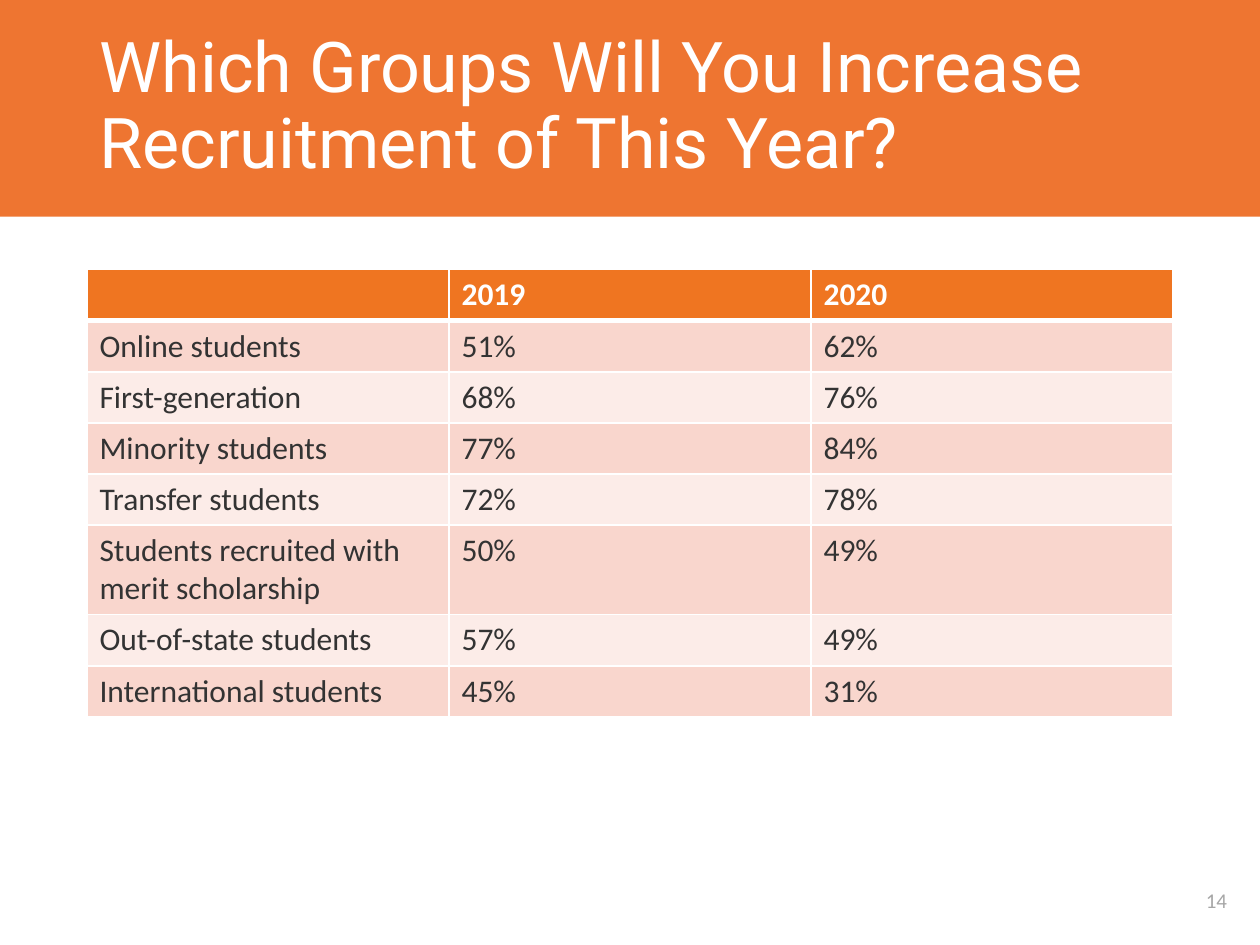
import lxml.etree
import pptx
import pptx.dml.color
import pptx.enum.shapes
import pptx.enum.text
import pptx.oxml.ns
import pptx.util

Inches = pptx.util.Inches
Pt = pptx.util.Pt

COLOURS = {
    "band": "EE7531",
    "header": "EF7521",
    "odd": "F9D6CD",
    "even": "FCECE8",
    "text": "333333",
    "number": "A6A6A6",
    "white": "FFFFFF",
}

ROWS = [
    ("", "2019", "2020"),
    ("Online students", "51%", "62%"),
    ("First-generation", "68%", "76%"),
    ("Minority students", "77%", "84%"),
    ("Transfer students", "72%", "78%"),
    ("Students recruited with merit scholarship", "50%", "49%"),
    ("Out-of-state students", "57%", "49%"),
    ("International students", "45%", "31%"),
]
TALL_ROW = 5


class SlideBuilder:
    """Hold the style and the current slide, and add each kind of element."""

    def __init__(self, deck):
        self.slide = deck.slides.add_slide(deck.slide_layouts[5])
        self.shapes = self.slide.shapes
        self.heading_font = "Roboto"
        self.body_font = "Calibri"

    def colour(self, name):
        return pptx.dml.color.RGBColor.from_string(COLOURS[name])

    def format(self, para, font, size, colour, bold=False):
        para.font.name = font
        para.font.size = Pt(size)
        para.font.bold = bold
        para.font.color.rgb = self.colour(colour)

    def band(self, left, top, width, height):
        band = self.shapes.add_shape(
            pptx.enum.shapes.MSO_SHAPE.RECTANGLE,
            Inches(left), Inches(top), Inches(width), Inches(height))
        band.shadow.inherit = False
        band.fill.solid()
        band.fill.fore_color.rgb = self.colour("band")
        band.line.fill.background()
        band.element.getparent().insert(2, band.element)

    def title(self, text, left, top, width, height):
        title = self.shapes.title
        title.left, title.top = Inches(left), Inches(top)
        title.width, title.height = Inches(width), Inches(height)
        frame = title.text_frame
        frame.text = text
        frame.word_wrap = True
        frame.auto_size = pptx.enum.text.MSO_AUTO_SIZE.NONE
        frame.vertical_anchor = pptx.enum.text.MSO_ANCHOR.MIDDLE
        para = frame.paragraphs[0]
        para.alignment = pptx.enum.text.PP_ALIGN.LEFT
        para.line_spacing = 0.9
        self.format(para, self.heading_font, 40, "white")

    def page_number(self, text, left, top, width, height):
        box = self.shapes.add_textbox(
            Inches(left), Inches(top), Inches(width), Inches(height))
        frame = box.text_frame
        frame.text = text
        frame.word_wrap = True
        frame.vertical_anchor = pptx.enum.text.MSO_ANCHOR.MIDDLE
        para = frame.paragraphs[0]
        para.alignment = pptx.enum.text.PP_ALIGN.CENTER
        self.format(para, self.body_font, 12, "number")

    def borders(self, cell, top, bottom):
        properties = cell._tc.get_or_add_tcPr()
        widths = {"lnL": 1, "lnR": 1, "lnT": top, "lnB": bottom}
        for position, (side, width) in enumerate(widths.items()):
            line = lxml.etree.Element(pptx.oxml.ns.qn("a:" + side), w=str(Pt(width)))
            fill = lxml.etree.SubElement(line, pptx.oxml.ns.qn("a:solidFill"))
            lxml.etree.SubElement(
                fill, pptx.oxml.ns.qn("a:srgbClr"), val=COLOURS["white"])
            properties.insert(position, line)

    def table(self, rows, left, top, width, height, tall_height):
        table = self.shapes.add_table(
            len(rows), len(rows[0]),
            Inches(left), Inches(top), Inches(width), Inches(height)).table
        row_height = (height - tall_height) / (len(rows) - 1)
        for index, values in enumerate(rows):
            table.rows[index].height = Inches(
                tall_height if index == TALL_ROW else row_height)
            is_header = index == 0
            fill = "header" if is_header else "odd" if index % 2 else "even"
            for column, value in enumerate(values):
                cell = table.cell(index, column)
                cell.text = value
                cell.fill.solid()
                cell.fill.fore_color.rgb = self.colour(fill)
                self.borders(cell, 3 if index == 1 else 1, 3 if is_header else 1)
                self.format(cell.text_frame.paragraphs[0], self.body_font, 18,
                            "white" if is_header else "text", is_header)


def main():
    deck = pptx.Presentation()
    deck.slide_width, deck.slide_height = Inches(10), Inches(7.5)
    page = SlideBuilder(deck)
    page.band(-0.01, 0, 10.02, 1.72)
    page.title("Which Groups Will You Increase Recruitment of This Year?",
               0.69, 0, 8.62, 1.71)
    page.table(ROWS, 0.69, 2.14, 8.62, 3.54, 0.7)
    page.page_number("14", 9.31, 6.95, 0.69, 0.39)
    deck.save("out.pptx")


if __name__ == "__main__":
    main()
